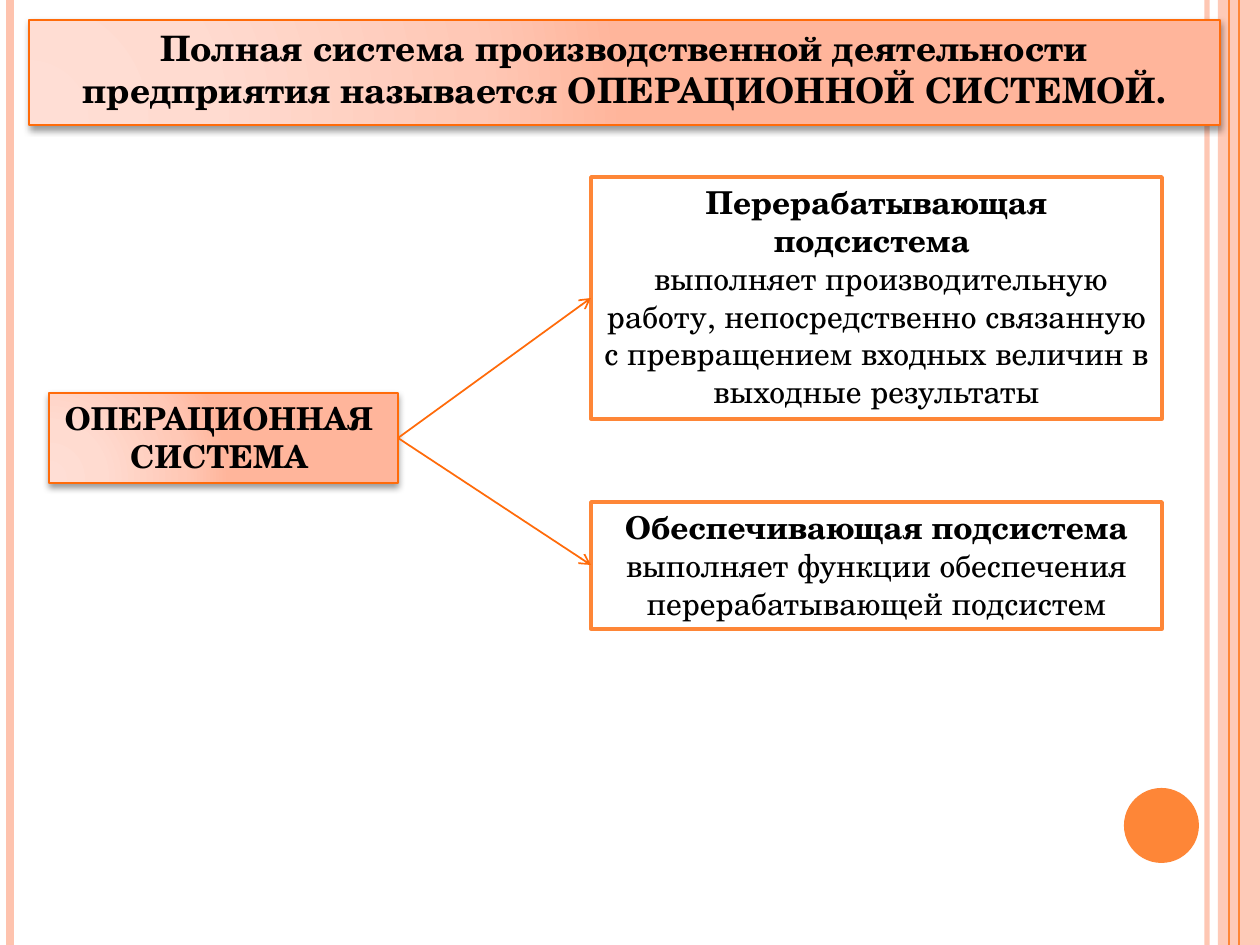
from dataclasses import dataclass
from typing import Optional

import pptx
import pptx.dml.color
import pptx.enum.shapes
import pptx.enum.text
import pptx.oxml
import pptx.oxml.ns
import pptx.util

SCALE = 914400 / 126  # EMU per px
W, H = 1260, 945
qn = pptx.oxml.ns.qn
NS = pptx.oxml.ns.nsdecls("a")
SHAPE = pptx.enum.shapes.MSO_SHAPE


@dataclass(frozen=True)
class Theme:
    font: str = "TeX Gyre Schola"
    ink: str = "000000"
    paper: str = "FFFFFF"
    pale: str = "FEC3AE"
    accent: str = "FE8637"
    edge: str = "FF6B0A"
    stops: tuple = ((0, "FFDED5"), (30, "FFDBD0"), (75, "FFC8B6"), (100, "FFB59B"))
    title: int = 20
    body: int = 18


T = Theme()


@dataclass(frozen=True)
class Rail:
    x: int
    color: str
    weight: float
    alpha: int = 100


@dataclass(frozen=True)
class Box:
    x: int
    y: int
    w: int
    h: int


@dataclass(frozen=True)
class Subsystem:
    box: Box
    name: str
    role: str


RAILS = [Rail(1207, T.pale, 3, 93), Rail(10, T.pale, 4.5), Rail(1239, T.accent, 1.5),
         Rail(1229, T.accent, 0.75)]
TITLE = Box(29, 20, 1191, 97)
SYSTEM = Box(49, 393, 349, 90)
SUBSYSTEMS = [
    Subsystem(Box(591, 177, 571, 242), "Перерабатывающая подсистема ",
              " выполняет производительную работу, непосредственно связанную "
              "с превращением входных величин в выходные результаты"),
    Subsystem(Box(591, 502, 571, 127), "Обеспечивающая подсистема",
              "выполняет функции обеспечения перерабатывающей подсистем"),
]


def px(n: float) -> int:
    return round(n * SCALE)


def rgb(color: str) -> pptx.dml.color.RGBColor:
    return pptx.dml.color.RGBColor.from_string(color)


def set_alpha(fill, alpha: int) -> None:
    if alpha < 100:
        clr = fill._xPr.find(".//" + qn("a:srgbClr"))
        clr.append(pptx.oxml.parse_xml(f'<a:alpha {NS} val="{alpha * 1000}"/>'))


def add_line(s, x1: int, y1: int, x2: int, y2: int, color: str, weight: float,
             alpha: int = 100, arrow: bool = False) -> None:
    line = s.shapes.add_connector(pptx.enum.shapes.MSO_CONNECTOR.STRAIGHT,
                                  px(x1), px(y1), px(x2), px(y2))
    line.line.color.rgb = rgb(color)
    line.line.width = pptx.util.Pt(weight)
    set_alpha(line.line.fill, alpha)
    if arrow:
        line.line._get_or_add_ln().append(
            pptx.oxml.parse_xml(f'<a:tailEnd {NS} type="arrow"/>'))
    line._element.spPr.append(pptx.oxml.parse_xml(f"<a:effectLst {NS}/>"))


def add_shape(s, kind, box: Box, fill: str, line: Optional[str] = None,
              weight: float = 1, alpha: int = 100):
    sp = s.shapes.add_shape(kind, px(box.x), px(box.y), px(box.w), px(box.h))
    sp.fill.solid()
    sp.fill.fore_color.rgb = rgb(fill)
    set_alpha(sp.fill, alpha)
    if line:
        sp.line.color.rgb = rgb(line)
        sp.line.width = pptx.util.Pt(weight)
    else:
        sp.line.fill.background()
    sp.shadow.inherit = False
    return sp


def style_glow(sp) -> None:
    """Give the shape the peach radial gradient, thin outline and soft shadow."""
    sp.fill.gradient()
    grad = sp._element.spPr.find(qn("a:gradFill"))
    for child in list(grad):
        grad.remove(child)
    stops = "".join(f'<a:gs pos="{pos * 1000}"><a:srgbClr val="{c}"/></a:gs>'
                    for pos, c in T.stops)
    grad.append(pptx.oxml.parse_xml(f"<a:gsLst {NS}>{stops}</a:gsLst>"))
    grad.append(pptx.oxml.parse_xml(
        f'<a:path {NS} path="circle">'
        '<a:fillToRect l="5000" t="100000" r="120000" b="10000"/></a:path>'))
    sp.line.color.rgb = rgb(T.edge)
    sp.line.width = pptx.util.Pt(1)
    sp.shadow.inherit = False
    sp._element.spPr.find(qn("a:effectLst")).append(pptx.oxml.parse_xml(
        f'<a:outerShdw {NS} blurRad="{pptx.util.Pt(4)}" dist="{pptx.util.Pt(2)}" '
        'dir="5400000" rotWithShape="0"><a:srgbClr val="000000">'
        '<a:alpha val="40000"/></a:srgbClr></a:outerShdw>'))


def write(sp, *lines: str, size: int = T.body, bold_lines: int = 1, wrap: bool = True) -> None:
    """Write one centred paragraph per line, the first bold_lines of them bold."""
    tf = sp.text_frame
    tf.word_wrap = wrap
    tf.auto_size = pptx.enum.text.MSO_AUTO_SIZE.SHAPE_TO_FIT_TEXT
    tf.vertical_anchor = pptx.enum.text.MSO_ANCHOR.TOP
    for i, text in enumerate(lines):
        p = tf.add_paragraph() if i else tf.paragraphs[0]
        p.alignment = pptx.enum.text.PP_ALIGN.CENTER
        r = p.add_run()
        r.text = text
        r.font.name = T.font
        r.font.size = pptx.util.Pt(size)
        r.font.bold = i < bold_lines
        r.font.color.rgb = rgb(T.ink)


def draw_frame(s) -> None:
    add_shape(s, SHAPE.RECTANGLE, Box(1218, 0, 42, H), T.pale, alpha=87)
    for rail in RAILS:
        add_line(s, rail.x, 0, rail.x, H, rail.color, rail.weight, rail.alpha)
    add_shape(s, SHAPE.OVAL, Box(1124, 788, 75, 75), T.accent)


def draw_title(s) -> None:
    sp = s.shapes.title
    sp.left, sp.top = px(TITLE.x), px(TITLE.y)
    sp.width, sp.height = px(TITLE.w), px(TITLE.h)
    style_glow(sp)
    write(sp, "Полная система производственной деятельности предприятия "
              "называется ОПЕРАЦИОННОЙ СИСТЕМОЙ.", size=T.title)
    s.shapes._spTree.append(sp._element)  # in front of the frame


def draw_diagram(s) -> None:
    sp = add_shape(s, SHAPE.RECTANGLE, SYSTEM, T.pale)
    style_glow(sp)
    write(sp, "ОПЕРАЦИОННАЯ ", "СИСТЕМА ", bold_lines=2, wrap=False)
    for sub in SUBSYSTEMS:
        box = sub.box
        sp = add_shape(s, SHAPE.RECTANGLE, box, T.paper, T.accent, 2)
        write(sp, sub.name, sub.role)
        add_line(s, SYSTEM.x + SYSTEM.w, SYSTEM.y + SYSTEM.h // 2,
                 box.x, box.y + box.h // 2, T.edge, 1, arrow=True)


def main() -> None:
    prs = pptx.Presentation()
    prs.slide_width, prs.slide_height = px(W), px(H)
    s = prs.slides.add_slide(prs.slide_layouts[5])
    draw_frame(s)
    draw_title(s)
    draw_diagram(s)
    prs.save("out.pptx")


if __name__ == "__main__":
    main()
